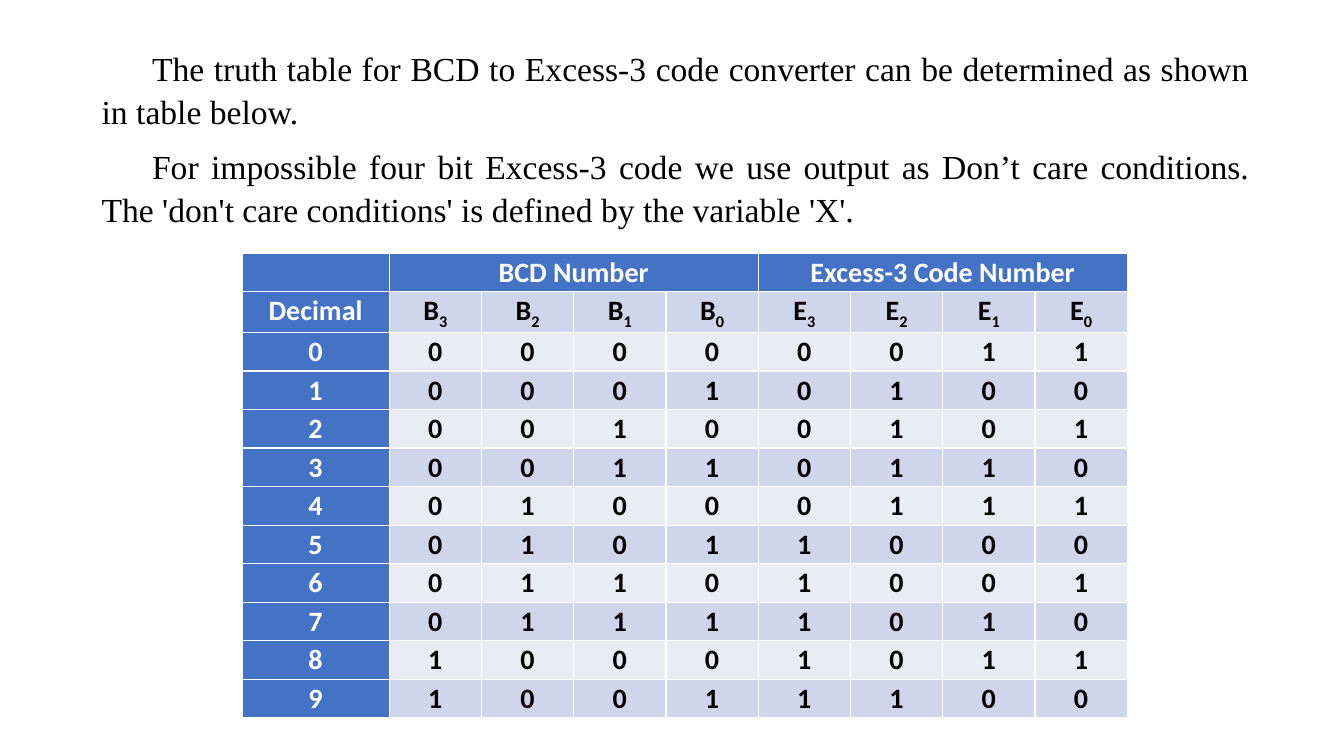
import pptx
import pptx.util
import pptx.dml.color
import pptx.enum.text

Inches = pptx.util.Inches
Pt = pptx.util.Pt


def color(hex_code):
    return pptx.dml.color.RGBColor.from_string(hex_code)


def style(paragraph, typeface, size, text_color, alignment):
    paragraph.alignment = alignment
    paragraph.line_spacing = 1.07
    paragraph.font.name = typeface
    paragraph.font.size = Pt(size)
    paragraph.font.color.rgb = color(text_color)


presentation = pptx.Presentation()
presentation.slide_width = Inches(13.33)
presentation.slide_height = Inches(7.5)
slide = presentation.slides.add_slide(presentation.slide_layouts[6])

explanation = [
    "The truth table for BCD to Excess-3 code converter can be determined as shown in table below.",
    "For impossible four bit Excess-3 code we use output as Don’t care conditions. "
    "The 'don't care conditions' is defined by the variable 'X'.",
]
introduction = slide.shapes.add_textbox(
    Inches(0.91), Inches(0.4), Inches(11.58), Inches(1.92)
).text_frame
introduction.word_wrap = True
introduction.auto_size = pptx.enum.text.MSO_AUTO_SIZE.SHAPE_TO_FIT_TEXT
for index, sentence in enumerate(explanation):
    paragraph = introduction.add_paragraph() if index else introduction.paragraphs[0]
    paragraph.text = sentence
    style(paragraph, "Times New Roman", 24, "000000", pptx.enum.text.PP_ALIGN.JUSTIFY)
    paragraph.space_after = Pt(8)
    properties = paragraph._p.get_or_add_pPr()
    properties.set("marL", "0")
    properties.set("indent", str(Inches(0.5)))

headings = ["", "BCD Number", "", "", "", "Excess-3 Code Number", "", "", ""]
variables = ["Decimal"] + [letter + bit for letter in "BE" for bit in "3210"]
codes = [
    [str(decimal), *format(decimal, "04b"), *format(decimal + 3, "04b")]
    for decimal in range(10)
]
rows = [headings, variables] + codes

truth_table = slide.shapes.add_table(
    len(rows), len(variables), Inches(2.4), Inches(2.51), Inches(8.78), Inches(4.59)
).table
truth_table.first_col = True
for index, column in enumerate(truth_table.columns):
    column.width = Inches(0.915 if index else 1.46)
for first_bit in (1, 5):
    truth_table.cell(0, first_bit).merge(truth_table.cell(0, first_bit + 3))

for row_index, row in enumerate(rows):
    for column_index, value in enumerate(row):
        cell = truth_table.cell(row_index, column_index)
        is_header = row_index == 0 or column_index == 0
        band = "CFD5EA" if row_index % 2 else "E9EBF5"
        cell.fill.solid()
        cell.fill.fore_color.rgb = color("4472C4" if is_header else band)
        cell.margin_left = cell.margin_right = Inches(0.07)
        cell.margin_top = cell.margin_bottom = 0
        paragraph = cell.text_frame.paragraphs[0]
        style(paragraph, "Calibri", 20, "FFFFFF" if is_header else "000000",
              pptx.enum.text.PP_ALIGN.CENTER)
        paragraph.font.bold = True
        if row_index == 1 and column_index:
            paragraph.add_run().text = value[0]
            subscript = paragraph.add_run()
            subscript.text = value[1]
            subscript.font._element.set("baseline", "-25000")
        elif value:
            paragraph.add_run().text = value

presentation.save("out.pptx")
